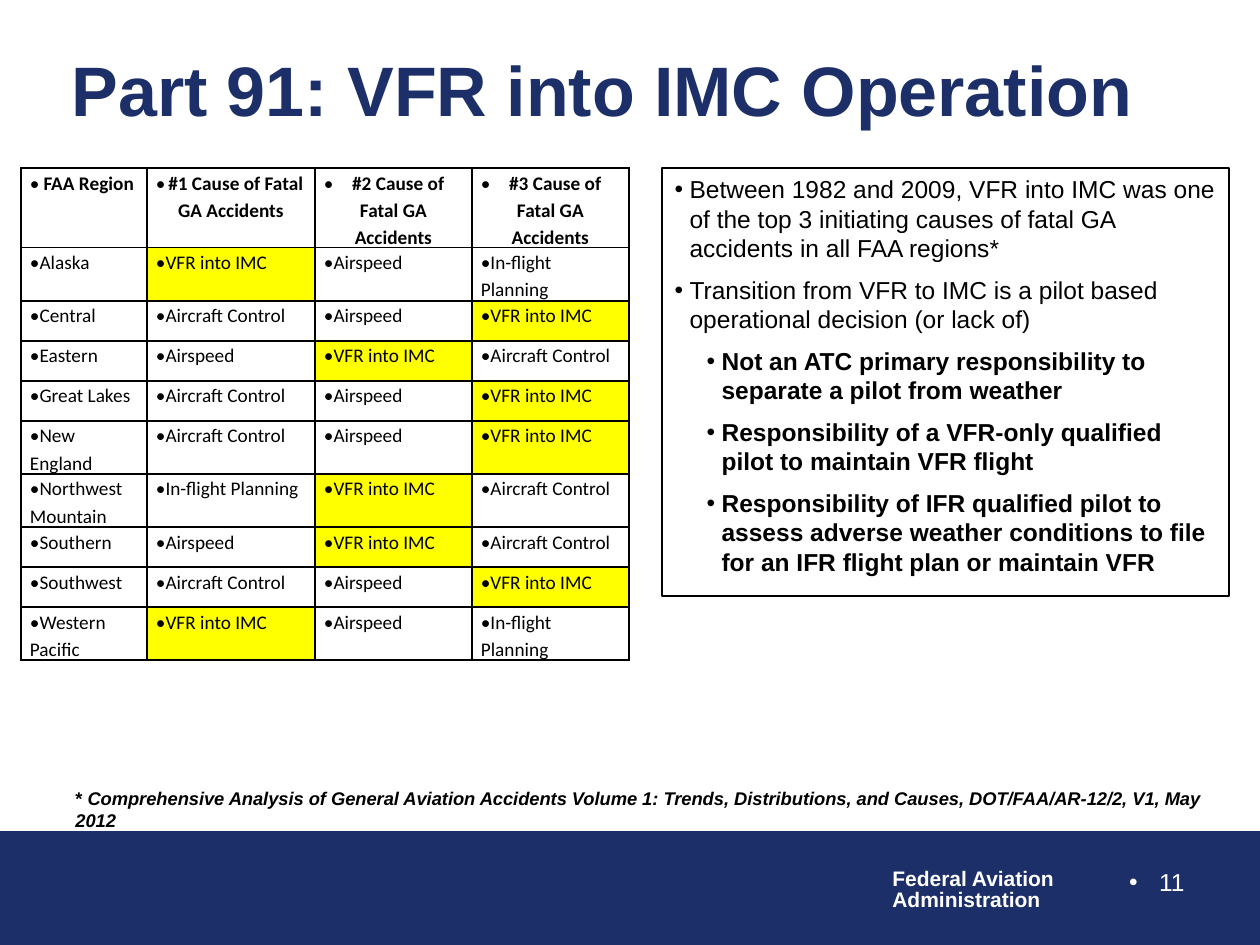
from dataclasses import dataclass

from lxml.etree import SubElement
from pptx import Presentation
from pptx.dml.color import RGBColor
from pptx.enum.shapes import MSO_SHAPE
from pptx.enum.text import MSO_ANCHOR, MSO_AUTO_SIZE, PP_ALIGN
from pptx.oxml.ns import qn
from pptx.util import Emu, Pt

PX = 914400 / 126
COLORS = {"navy": "1D2F68", "white": "FFFFFF", "black": "000000", "highlight": "FFFF00"}
HIGHLIGHTED = "VFR into IMC"


@dataclass(frozen=True)
class Box:
    x: int
    y: int
    w: int
    h: int

    def emu(self) -> list[Emu]:
        return [px(v) for v in (self.x, self.y, self.w, self.h)]


@dataclass(frozen=True)
class Style:
    size: float
    color: str = "black"
    name: str = "Arial"
    bold: bool = False
    italic: bool = False


@dataclass(frozen=True)
class Point:
    text: str
    level: int = 0


TITLE = Box(59, 47, 1168, 84)
BAND = Box(0, 832, 1260, 112)
AGENCY = Box(880, 863, 189, 55)
NUMBER = Box(903, 861, 294, 66)
TABLE = Box(21, 168, 608, 420)
PANEL = Box(662, 168, 567, 428)
FOOTNOTE = Box(63, 781, 1155, 59)

COL_WIDTHS = (126, 168, 157, 157)
HEADER_HEIGHT, ROW_HEIGHT = 60, 40
ROWS = (
    ("FAA Region", "#1 Cause of Fatal GA Accidents",
     "#2 Cause of Fatal GA Accidents", "#3 Cause of Fatal GA Accidents"),
    ("Alaska", "VFR into IMC", "Airspeed", "In-flight Planning"),
    ("Central", "Aircraft Control", "Airspeed", "VFR into IMC"),
    ("Eastern", "Airspeed", "VFR into IMC", "Aircraft Control"),
    ("Great Lakes", "Aircraft Control", "Airspeed", "VFR into IMC"),
    ("New England", "Aircraft Control", "Airspeed", "VFR into IMC"),
    ("Northwest Mountain", "In-flight Planning", "VFR into IMC", "Aircraft Control"),
    ("Southern", "Airspeed", "VFR into IMC", "Aircraft Control"),
    ("Southwest", "Aircraft Control", "Airspeed", "VFR into IMC"),
    ("Western Pacific", "VFR into IMC", "Airspeed", "In-flight Planning"),
)
POINTS = (
    Point("Between 1982 and 2009, VFR into IMC was one of the top 3 initiating "
          "causes of fatal GA accidents in all FAA regions*"),
    Point("Transition from VFR to IMC is a pilot based operational decision (or lack of)"),
    Point("Not an ATC primary responsibility to separate a pilot from weather", 1),
    Point("Responsibility of a VFR-only qualified pilot to maintain VFR flight", 1),
    Point("Responsibility of IFR qualified pilot to assess adverse weather conditions "
          "to file for an IFR flight plan or maintain VFR", 1),
)
POINT_INDENTS = (15, 47)
HANGING = 15
SOURCE = (" Comprehensive Analysis of General Aviation Accidents Volume 1: Trends, "
          "Distributions, and Causes, DOT/FAA/AR-12/2, V1, May 2012")


def px(value: int) -> Emu:
    return Emu(round(value * PX))


def rgb(color: str) -> RGBColor:
    return RGBColor.from_string(COLORS[color])


def add_run(p, text: str, style: Style) -> None:
    r = p.add_run()
    r.text = text
    formats = {"size": Pt(style.size), "name": style.name,
               "bold": style.bold, "italic": style.italic}
    for key, value in formats.items():
        setattr(r.font, key, value)
    r.font.color.rgb = rgb(style.color)


def add_bullet(p, indent: int = 0, hanging: int = 0, font: str = "Arial") -> None:
    pPr = p._p.get_or_add_pPr()
    if hanging:
        pPr.set("marL", str(px(indent)))
        pPr.set("indent", str(-px(hanging)))
    SubElement(pPr, qn("a:buFont"), typeface=font)
    SubElement(pPr, qn("a:buChar"), char="•")


def place(sp, box: Box) -> None:
    sp.left, sp.top, sp.width, sp.height = box.emu()


def add_textbox(slide, box: Box, wrap: bool = True):
    tf = slide.shapes.add_textbox(*box.emu()).text_frame
    tf.word_wrap = wrap
    return tf


def add_title(slide) -> None:
    sp = slide.shapes.title
    place(sp, TITLE)
    tf = sp.text_frame
    tf.auto_size = MSO_AUTO_SIZE.NONE
    tf.vertical_anchor = MSO_ANCHOR.MIDDLE
    p = tf.paragraphs[0]
    p.alignment = PP_ALIGN.LEFT
    add_run(p, "Part 91: VFR into IMC Operation", Style(40, "navy", bold=True))


def add_footer(slide) -> None:
    band = slide.shapes.add_shape(MSO_SHAPE.RECTANGLE, *BAND.emu())
    band.shadow.inherit = False
    band.fill.solid()
    band.fill.fore_color.rgb = band.line.color.rgb = rgb("navy")
    band.line.width = Pt(0.75)

    tf = add_textbox(slide, AGENCY, wrap=False)
    for i, line in enumerate(("Federal Aviation", "Administration")):
        p = tf.add_paragraph() if i else tf.paragraphs[0]
        p.line_spacing = 0.85
        add_run(p, line, Style(12, "white", bold=True))

    p = add_textbox(slide, NUMBER).paragraphs[0]
    add_bullet(p, indent=30, hanging=30)
    p.alignment = PP_ALIGN.RIGHT
    add_run(p, "11", Style(14, "white"))


def add_borders(cell) -> None:
    tcPr = cell._tc.get_or_add_tcPr()
    for i, side in enumerate(("lnL", "lnR", "lnT", "lnB")):
        ln = tcPr.makeelement(qn(f"a:{side}"), {"w": str(Pt(1))})
        fill = SubElement(ln, qn("a:solidFill"))
        SubElement(fill, qn("a:srgbClr"), val=COLORS["black"])
        tcPr.insert(i, ln)


def fill_cell(cell, text: str, header: bool) -> None:
    margins = {"margin_left": px(9), "margin_right": px(9),
               "margin_top": 0, "margin_bottom": 0}
    for key, value in margins.items():
        setattr(cell, key, value)
    if text == HIGHLIGHTED:
        cell.fill.solid()
        cell.fill.fore_color.rgb = rgb("highlight")
    else:
        cell.fill.background()
    add_borders(cell)
    p = cell.text_frame.paragraphs[0]
    add_bullet(p, font="Calibri")
    p.alignment = PP_ALIGN.CENTER if header else PP_ALIGN.LEFT
    p.line_spacing = 1.15
    add_run(p, text, Style(11, name="Calibri", bold=header))


def add_causes_table(slide) -> None:
    table = slide.shapes.add_table(len(ROWS), len(COL_WIDTHS), *TABLE.emu()).table
    table.first_row = table.horz_banding = False
    for column, width in zip(table.columns, COL_WIDTHS):
        column.width = px(width)
    for i, texts in enumerate(ROWS):
        table.rows[i].height = px(ROW_HEIGHT if i else HEADER_HEIGHT)
        for j, text in enumerate(texts):
            fill_cell(table.cell(i, j), text, header=i == 0)


def add_points(slide) -> None:
    sp = slide.placeholders[1]
    place(sp, PANEL)
    sp.line.color.rgb = rgb("black")
    sp.line.width = Pt(1.5)
    tf = sp.text_frame
    tf.auto_size = MSO_AUTO_SIZE.NONE
    for i, point in enumerate(POINTS):
        p = tf.add_paragraph() if i else tf.paragraphs[0]
        p.level = point.level
        add_bullet(p, POINT_INDENTS[point.level], HANGING)
        p.space_before = Pt(7 if i else 0)
        add_run(p, point.text, Style(14, bold=point.level > 0))


def add_footnote(slide) -> None:
    p = add_textbox(slide, FOOTNOTE).paragraphs[0]
    add_run(p, "*", Style(10.5, bold=True))
    add_run(p, SOURCE, Style(10.5, bold=True, italic=True))


def main() -> None:
    prs = Presentation()
    prs.slide_width, prs.slide_height = px(1260), px(945)
    slide = prs.slides.add_slide(prs.slide_layouts[1])
    add_footer(slide)
    add_title(slide)
    add_causes_table(slide)
    add_footnote(slide)
    add_points(slide)
    prs.save("out.pptx")


if __name__ == "__main__":
    main()
